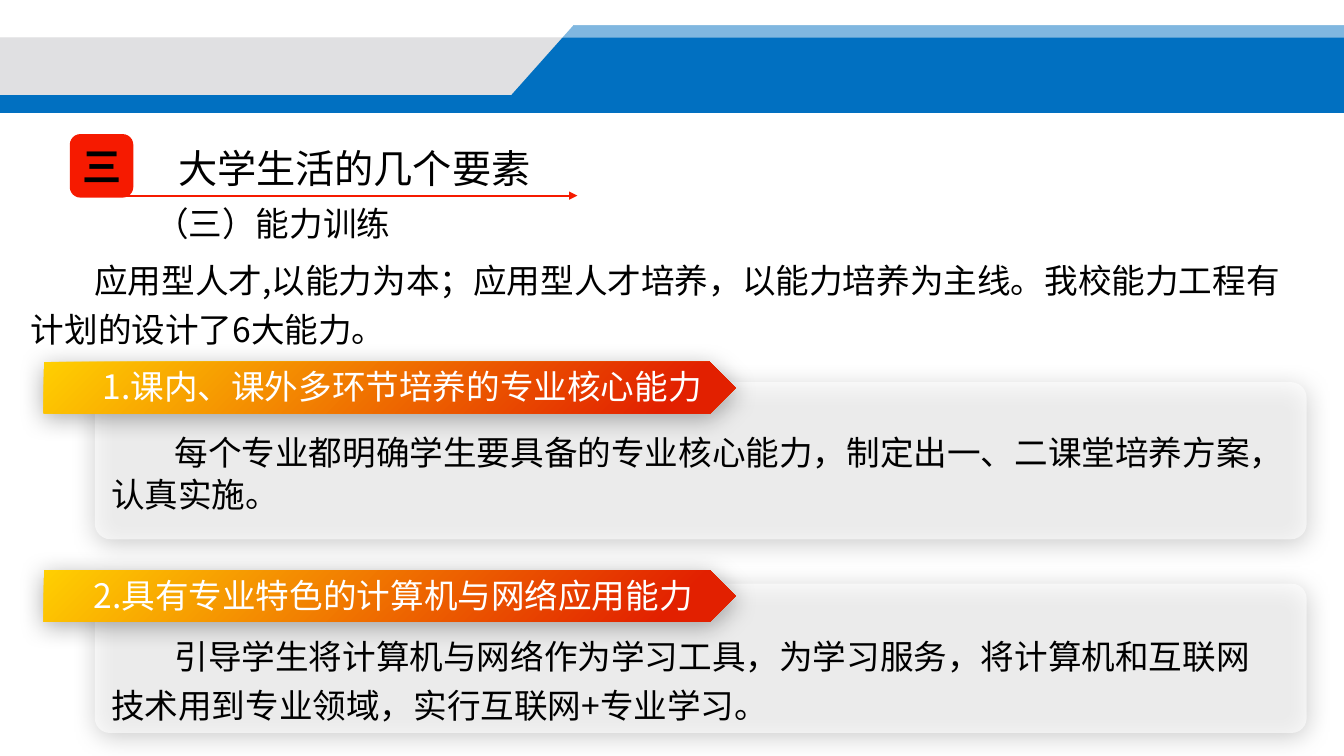
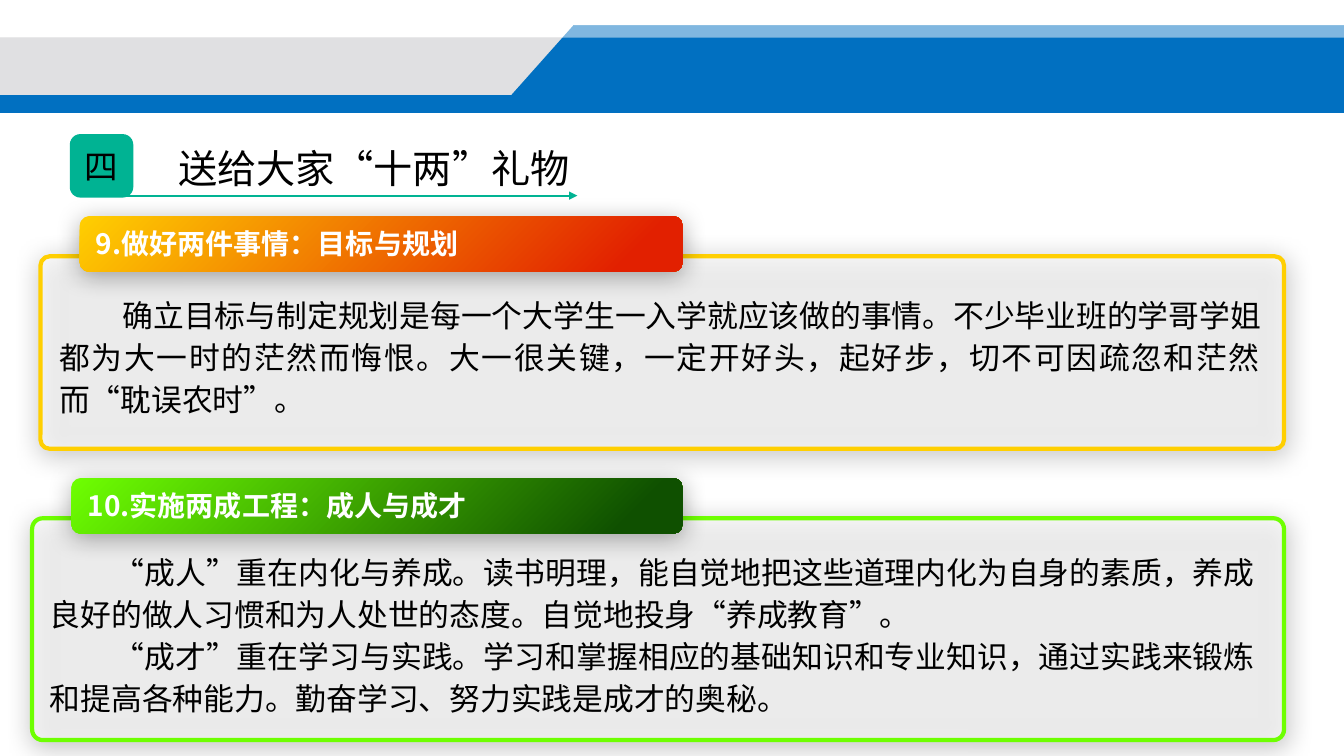
import lxml.etree
import pptx
import pptx.dml.color
import pptx.enum.shapes
import pptx.enum.text
import pptx.oxml.ns
import pptx.util

Cm = pptx.util.Cm
Pt = pptx.util.Pt
qn = pptx.oxml.ns.qn
SHAPE = pptx.enum.shapes.MSO_SHAPE
ALIGN = pptx.enum.text.PP_ALIGN
ANCHOR = pptx.enum.text.MSO_ANCHOR
AUTO_SIZE = pptx.enum.text.MSO_AUTO_SIZE

COLORS = {
    "blue": "0170C1", "grey": "E0E0E2", "white": "FFFFFF", "black": "000000",
    "red": "F61A00", "teal": "00B393",
    "yellow": "FFCF01", "dark_red": "E22000",
    "lime": "6EFF01", "dark_green": "0F5000",
}
CJK_FONT = "Noto Sans CJK SC"
SLIDE_WIDTH, SLIDE_HEIGHT = 33.87, 19.05
FIRST_LINE_INDENT = 1.6
TAB_HEIGHT = 1.4

# Text styles: font values and paragraph values
TITLE = ({"size": Pt(28), "name": "Cabin"}, {})
SUBTITLE = ({"size": Pt(24), "name": CJK_FONT},
            {"line_spacing": Pt(35), "alignment": ALIGN.JUSTIFY})
BODY_LOOSE = ({"size": Pt(24), "name": CJK_FONT}, {"line_spacing": Pt(35)})
BODY_TIGHT = ({"size": Pt(24), "name": CJK_FONT}, {"line_spacing": Pt(30)})
BODY_JUSTIFIED = ({"size": Pt(22), "name": CJK_FONT},
                  {"line_spacing": Pt(30), "alignment": ALIGN.JUSTIFY})
PLATE_HEADING = ({"size": Pt(24), "name": CJK_FONT}, {"alignment": ALIGN.CENTER})
TAB_HEADING = ({"size": Pt(20), "name": CJK_FONT, "bold": True}, {})
BADGE_BOLD = ({"size": Pt(28), "name": "Roboto Condensed", "bold": True},
              {"alignment": ALIGN.CENTER})
BADGE_PLAIN = ({"size": Pt(24), "name": CJK_FONT}, {"alignment": ALIGN.CENTER})


def rgb(color):
    return pptx.dml.color.RGBColor.from_string(COLORS[color])


def set_attributes(target, values):
    for name, value in values.items():
        setattr(target, name, value)


def lengths(box):
    return [Cm(value) for value in box]


# Shapes
def paint(shape, color, opacity=100, line=None, line_width=1):
    shape.shadow.inherit = False
    shape.fill.solid()
    shape.fill.fore_color.rgb = rgb(color)
    if opacity < 100:
        color_element = shape.element.spPr.find(qn("a:solidFill"))[0]
        lxml.etree.SubElement(color_element, qn("a:alpha"), val=str(opacity * 1000))
    if line:
        shape.line.color.rgb = rgb(line)
        shape.line.width = Pt(line_width)
    else:
        shape.line.fill.background()


def add_block(slide, kind, box, color, **options):
    shape = slide.shapes.add_shape(kind, *lengths(box))
    paint(shape, color, **options)
    return shape


def add_soft_shadow(shape):
    effects = shape.element.spPr.find(qn("a:effectLst"))
    shadow = lxml.etree.SubElement(
        effects, qn("a:outerShdw"), blurRad=str(Pt(17.8)), dist=str(Pt(3)),
        dir=str(87 * 60000), algn="ctr", rotWithShape="0")
    color = lxml.etree.SubElement(shadow, qn("a:srgbClr"), val=COLORS["black"])
    lxml.etree.SubElement(color, qn("a:alpha"), val="33000")


def add_panel(slide, box, corner, line=None):
    panel = add_block(slide, SHAPE.ROUNDED_RECTANGLE, box, "white",
                      opacity=60, line=line, line_width=3)
    panel.adjustments[0] = corner
    add_soft_shadow(panel)


def add_gradient_label(slide, kind, box, start, end):
    label = add_block(slide, kind, box, start)
    label.fill.gradient()
    label.fill.gradient_angle = 315
    for stop, color, position in zip(label.fill.gradient_stops, (start, end), (0, 0.9)):
        stop.color.rgb = rgb(color)
        stop.position = position
    add_soft_shadow(label)


# Text
def write(shape, paragraphs, style, color="black", indent=0):
    font_values, paragraph_values = style
    frame = shape.text_frame
    for index, text in enumerate(paragraphs):
        paragraph = frame.add_paragraph() if index else frame.paragraphs[0]
        set_attributes(paragraph, paragraph_values)
        if indent:
            paragraph._p.get_or_add_pPr().set("indent", str(Cm(indent)))
        run = paragraph.add_run()
        run.text = text
        set_attributes(run.font, font_values)
        run.font.color.rgb = rgb(color)
        lxml.etree.SubElement(run._r.get_or_add_rPr(), qn("a:ea"), typeface=CJK_FONT)


def add_text(slide, box, paragraphs, style, color="black", indent=0, **frame_values):
    text_box = slide.shapes.add_textbox(*lengths(box))
    set_attributes(text_box.text_frame, {
        "word_wrap": True, "auto_size": AUTO_SIZE.SHAPE_TO_FIT_TEXT, **frame_values})
    write(text_box, paragraphs, style, color, indent)


# Parts that every slide shares
def add_bands(slide):
    for top, color in ((1.42, "blue"), (0.95, "grey")):
        add_block(slide, SHAPE.RECTANGLE, (0, top, SLIDE_WIDTH, 1.42), color, line=color)
    top, bottom = 0.64, 2.83
    builder = slide.shapes.build_freeform(Cm(14.45), Cm(top))
    builder.add_line_segments([
        lengths(point) for point in
        ((SLIDE_WIDTH, top), (SLIDE_WIDTH, bottom), (12.5, bottom))])
    paint(builder.convert_to_shape(), "blue")
    add_block(slide, SHAPE.RECTANGLE, (0, top, SLIDE_WIDTH, 0.31), "white", opacity=50)


def add_section_title(slide, number, title, color, badge_style):
    badge = add_block(slide, SHAPE.ROUNDED_RECTANGLE, (1.76, 3.38, 1.6, 1.6), color)
    badge.text_frame.vertical_anchor = ANCHOR.MIDDLE
    write(badge, [number], badge_style)
    arrow = slide.shapes.add_connector(
        pptx.enum.shapes.MSO_CONNECTOR.STRAIGHT, *lengths((2.57, 4.93, 14.55, 4.93)))
    arrow.line.color.rgb = rgb(color)
    arrow.line.width = Pt(1.5)
    line = arrow.element.spPr.find(qn("a:ln"))
    lxml.etree.SubElement(line, qn("a:tailEnd"), type="triangle")
    lxml.etree.SubElement(arrow.element.spPr, qn("a:effectLst"))
    add_text(slide, (4.24, 3.51, 12, 1.45), [title], TITLE)


def add_slide(presentation, *section):
    slide = presentation.slides.add_slide(presentation.slide_layouts[6])
    add_bands(slide)
    add_section_title(slide, *section)
    return slide


# Content cards
def add_plate_card(slide, panel_top, panel_height, plate_top, heading_box, heading):
    add_panel(slide, (2.39, panel_top, 30.54, panel_height), 0.1)
    add_gradient_label(slide, SHAPE.PENTAGON, (1.1, plate_top, 17.44, 1.3),
                       "yellow", "dark_red")
    add_text(slide, heading_box, [heading], PLATE_HEADING, "white")


def add_tab_card(slide, panel_box, start, end, heading, body_box, paragraphs):
    left, top = panel_box[:2]
    tab_left, tab_top = left + 0.99, top - 1.01
    tab_width = 17.2 - tab_left
    add_panel(slide, panel_box, 0.048, line=start)
    add_gradient_label(slide, SHAPE.ROUNDED_RECTANGLE,
                       (tab_left, tab_top, tab_width, TAB_HEIGHT), start, end)
    add_text(slide, (tab_left + 0.16, tab_top + 0.13, tab_width - 0.3, 1.22),
             [heading], TAB_HEADING, "white")
    add_text(slide, body_box, paragraphs, BODY_JUSTIFIED, indent=FIRST_LINE_INDENT)


def build_ability_slide(presentation):
    slide = add_slide(presentation, "三", "大学生活的几个要素", "red", BADGE_BOLD)
    add_text(slide, (3.66, 4.78, 8, 1.4), ["（三）能力训练"], SUBTITLE)
    add_text(slide, (0.53, 6.2, 32.41, 2.74),
             ["应用型人才,以能力为本；应用型人才培养，以能力培养为主线。"
              "我校能力工程有计划的设计了6大能力。"],
             BODY_LOOSE, indent=FIRST_LINE_INDENT)
    add_plate_card(slide, 9.63, 3.96, 9.12, (0.05, 9.09, 20.17, 1.27),
                   "1.课内、课外多环节培养的专业核心能力")
    add_text(slide, (2.55, 10.72, 29.57, 2.34),
             ["每个专业都明确学生要具备的专业核心能力，制定出一、二课堂培养方案，认真实施。"],
             BODY_TIGHT, indent=FIRST_LINE_INDENT)
    add_plate_card(slide, 14.71, 3.76, 14.37, (1.92, 14.36, 15.98, 1.27),
                   "2.具有专业特色的计算机与网络应用能力")
    add_text(slide, (2.55, 15.66, 29.57, 2.62),
             ["引导学生将计算机与网络作为学习工具，为学习服务，"
              "将计算机和互联网技术用到专业领域，实行互联网+专业学习。"],
             BODY_LOOSE, indent=FIRST_LINE_INDENT,
             vertical_anchor=ANCHOR.MIDDLE, margin_bottom=0)


def build_gift_slide(presentation):
    slide = add_slide(presentation, "四", "送给大家“十两”礼物", "teal", BADGE_PLAIN)
    add_tab_card(
        slide, (1.02, 6.46, 31.34, 4.85), "yellow", "dark_red",
        "9.做好两件事情：目标与规划", (1.24, 7.22, 30.78, 3.38),
        ["确立目标与制定规划是每一个大学生一入学就应该做的事情。"
         "不少毕业班的学哥学姐都为大一时的茫然而悔恨。"
         "大一很关键，一定开好头，起好步，切不可因疏忽和茫然而“耽误农时”。"])
    add_tab_card(
        slide, (0.81, 13.06, 31.55, 5.59), "lime", "dark_green",
        "10.实施两成工程：成人与成才", (1.01, 13.69, 30.89, 4.45),
        ["“成人”重在内化与养成。读书明理，能自觉地把这些道理内化为自身的素质，"
         "养成良好的做人习惯和为人处世的态度。自觉地投身“养成教育”。",
         "“成才”重在学习与实践。学习和掌握相应的基础知识和专业知识，"
         "通过实践来锻炼和提高各种能力。勤奋学习、努力实践是成才的奥秘。"])


def main():
    presentation = pptx.Presentation()
    presentation.slide_width = Cm(SLIDE_WIDTH)
    presentation.slide_height = Cm(SLIDE_HEIGHT)
    build_ability_slide(presentation)
    build_gift_slide(presentation)
    presentation.save("out.pptx")


if __name__ == "__main__":
    main()
